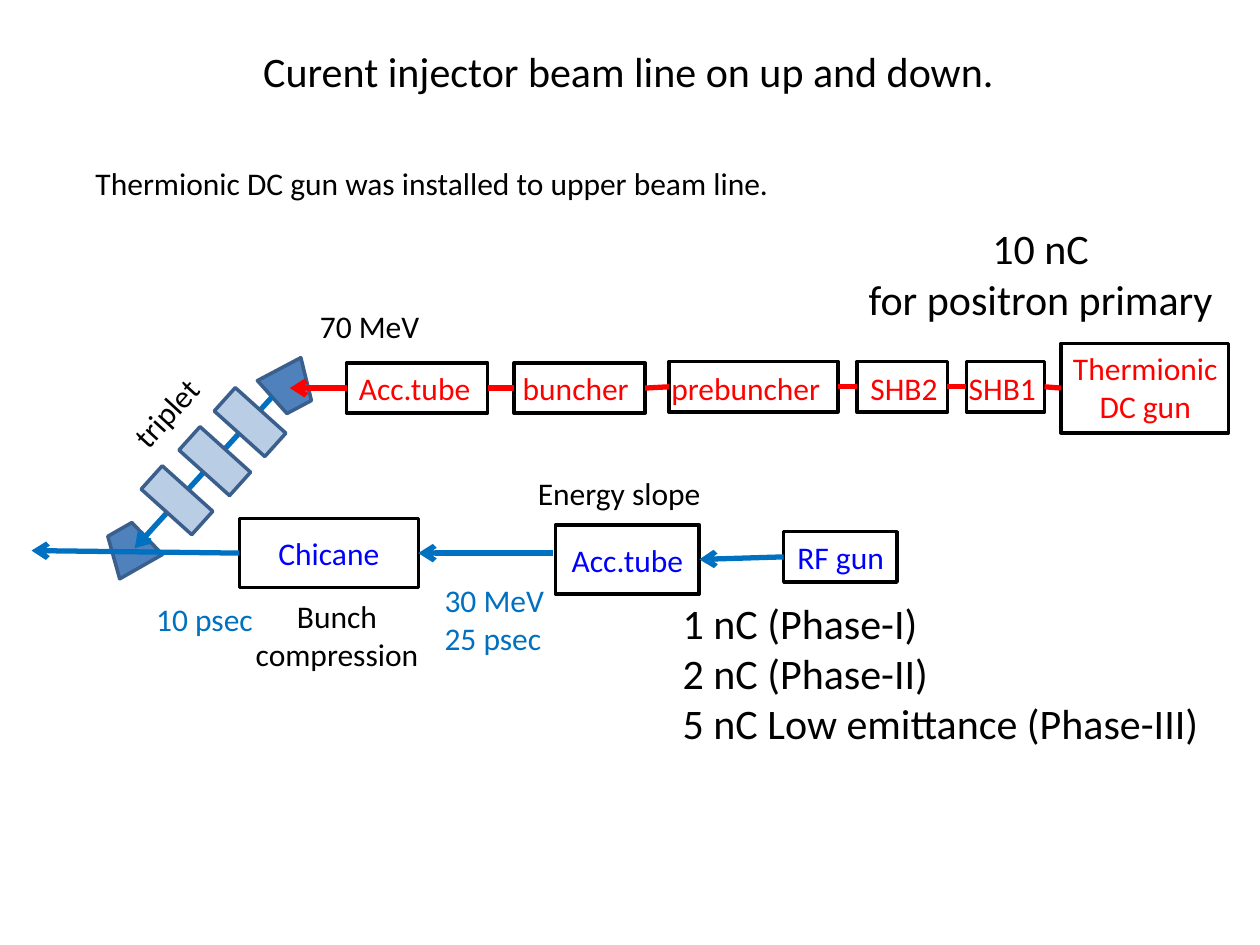
from collections import namedtuple
from itertools import pairwise

from lxml.etree import SubElement
from pptx import Presentation
from pptx.dml.color import RGBColor
from pptx.enum.shapes import MSO_CONNECTOR, MSO_SHAPE
from pptx.enum.text import MSO_ANCHOR, MSO_AUTO_SIZE, PP_ALIGN
from pptx.oxml.ns import qn
from pptx.util import Inches, Pt

Theme = namedtuple("Theme", "font body large outline beam black red blue azure "
                            "magnet magnet_edge lens white")
THEME = Theme("Calibri", 18, 24, 2, 3, "000000", "FF0000", "0000FF", "0070C0",
              "4F81BD", "3A5F8C", "B9CDE5", "FFFFFF")

SLIDE_WIDTH, SLIDE_HEIGHT = Inches(10), Inches(7.5)
COLUMN, ROW = SLIDE_WIDTH / 10, SLIDE_HEIGHT / 7.5
TOP, LEFT, BOTTOM, RIGHT = range(4)

# name: left, width, centre row, height
UPPER_LINE = [
    ("Acc.tube", 2.75, 1.12, 3.08, 0.4),
    ("buncher", 4.08, 1.04, 3.08, 0.4),
    ("prebuncher", 5.31, 1.34, 3.07, 0.4),
    ("SHB2", 6.8, 0.72, 3.07, 0.4),
    ("SHB1", 7.67, 0.62, 3.07, 0.4),
    ("Thermionic DC gun", 8.42, 1.33, 3.08, 0.71),
]
LOWER_LINE = [
    ("Chicane", 1.9, 1.42, 4.39, 0.55),
    ("Acc.tube", 4.41, 1.14, 4.44, 0.55),
    ("RF gun", 6.22, 0.9, 4.42, 0.4),
]
BENDING_MAGNETS = [(2.1, 2.91, 152.1), (0.84, 4.18, 330.3)]
TRIPLET_LENSES = [(1.86, 3.08), (1.58, 3.39), (1.28, 3.7)]
LENS_ANGLE = 312

UPPER_LABELS = [
    ("Acc.tube", 2.75, 2.88, 1.26, 0.4),
    ("buncher", 4.05, 2.88, 1.22, 0.4),
    ("prebuncher", 5.23, 2.88, 1.61, 0.4),
    ("SHB2", 6.81, 2.88, 0.87, 0.4),
    ("SHB1", 7.59, 2.88, 0.87, 0.4),
]
PLAIN_LABELS = [
    ("Energy slope", 4.17, 3.71, 1.54, 0.4),
    ("70 MeV", 2.44, 2.39, 1.17, 0.4),
    ("Thermionic DC gun was installed to upper beam line.", 0.66, 1.25, 8.9, 0.4),
]

presentation = Presentation()
presentation.slide_width, presentation.slide_height = SLIDE_WIDTH, SLIDE_HEIGHT
slide = presentation.slides.add_slide(presentation.slide_layouts[6])


def color(value):
    return RGBColor.from_string(value)


def place(left, top, width, height):
    return (round(left * COLUMN), round(top * ROW),
            round(width * COLUMN), round(height * ROW))


def write(shape, text, ink, size=THEME.body, align=PP_ALIGN.LEFT):
    shape.text_frame.text = text
    for paragraph in shape.text_frame.paragraphs:
        paragraph.alignment = align
        for run in paragraph.runs:
            run.font.name = THEME.font
            run.font.size = Pt(size)
            run.font.color.rgb = color(ink)


def add_label(text, left, top, width, height, ink=THEME.black, size=THEME.body,
              align=PP_ALIGN.LEFT, wrap=True, angle=0):
    label = slide.shapes.add_textbox(*place(left, top, width, height))
    label.rotation = angle
    label.text_frame.word_wrap = wrap
    label.text_frame.auto_size = MSO_AUTO_SIZE.SHAPE_TO_FIT_TEXT
    write(label, text, ink, size, align)


def add_block(kind, left, top, width, height, fill=None, edge=THEME.black, angle=0):
    shape = slide.shapes.add_shape(kind, *place(left, top, width, height))
    shape.shadow.inherit = False
    shape.rotation = angle
    if fill:
        shape.fill.solid()
        shape.fill.fore_color.rgb = color(fill)
    else:
        shape.fill.background()
    shape.line.color.rgb = color(edge)
    shape.line.width = Pt(THEME.outline)
    return shape


def add_station(left, width, centre, height, fill=None):
    return add_block(MSO_SHAPE.RECTANGLE, left, centre - height / 2, width, height, fill)


def add_beam(ink, start=(0, 0), end=(0, 0), source=None, target=None, arrow=True):
    beam = slide.shapes.add_connector(
        MSO_CONNECTOR.STRAIGHT, *place(*start, *end))
    if source:
        beam.begin_connect(source, LEFT)
    if target:
        beam.end_connect(target, RIGHT)
    beam.line.color.rgb = color(ink)
    beam.line.width = Pt(THEME.beam)
    if arrow:
        SubElement(beam.line._get_or_add_ln(), qn("a:tailEnd"), type="arrow")
    SubElement(beam._element.spPr, qn("a:effectLst"))


for left, top, angle in BENDING_MAGNETS:
    add_block(MSO_SHAPE.TRAPEZOID, left, top, 0.39, 0.34,
              THEME.magnet, THEME.magnet_edge, angle)

lower = []
for name, *geometry in LOWER_LINE:
    station = add_station(*geometry, fill=THEME.white)
    station.text_frame.vertical_anchor = MSO_ANCHOR.MIDDLE
    if name != "RF gun":
        write(station, name, THEME.blue, align=PP_ALIGN.CENTER)
    lower.append(station)
chicane, lower_tube, rf_gun = lower
add_beam(THEME.azure, start=(4.39, 4.39), target=chicane)
add_beam(THEME.azure, source=rf_gun, target=lower_tube)
add_beam(THEME.azure, end=(0.25, 4.37), source=chicane)

upper = [add_station(*geometry) for name, *geometry in UPPER_LINE]
for target, source in pairwise(upper):
    add_beam(THEME.red, source=source, target=target, arrow=False)
add_beam(THEME.azure, start=(2.16, 3.15), end=(1.07, 4.35))
add_beam(THEME.red, end=(2.3, 3.08), source=upper[0])

for left, top in TRIPLET_LENSES:
    add_block(MSO_SHAPE.RECTANGLE, left, top, 0.25, 0.54,
              THEME.lens, THEME.magnet_edge, LENS_ANGLE)

for label in UPPER_LABELS:
    add_label(*label, ink=THEME.red)
for label in PLAIN_LABELS:
    add_label(*label)
add_label("Thermionic DC gun", 8.34, 2.72, 1.5, 0.71, THEME.red, align=PP_ALIGN.CENTER)
add_label("RF gun", 6.23, 4.22, 1.1, 0.4, THEME.blue)
add_label("30 MeV\n25 psec", 3.43, 4.56, 1.1, 0.71, THEME.azure)
add_label("10 psec", 1.14, 4.71, 0.98, 0.4, THEME.azure, wrap=False)
add_label("Bunch compression", 1.89, 4.69, 1.57, 0.71, align=PP_ALIGN.CENTER)
add_label("triplet", 0.85, 2.95, 1.16, 0.4, angle=312.5)
add_label("1 nC (Phase-I)\n2 nC (Phase-II)\n5 nC Low emittance (Phase-III)",
          5.32, 4.69, 4.54, 1.31, size=THEME.large)
add_label("10 nC\nfor positron primary", 6.68, 1.72, 3.16, 0.91,
          size=THEME.large, align=PP_ALIGN.CENTER)
add_label("Curent injector beam line on up and down.", 1.99, 0.31, 6.05, 0.5,
          size=THEME.large, wrap=False)

presentation.save("out.pptx")
